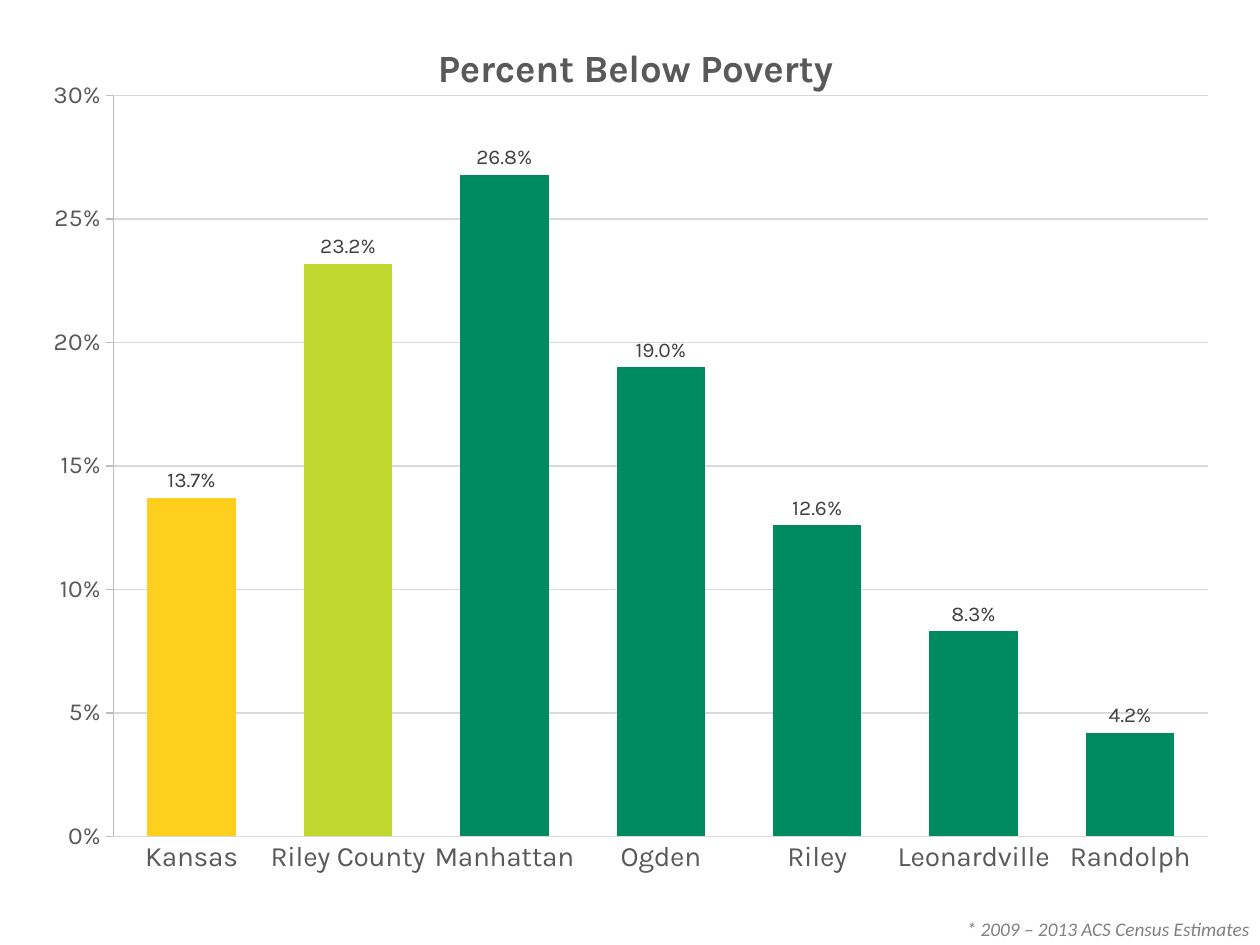
from lxml.etree import SubElement
from pptx import Presentation
from pptx.chart.data import CategoryChartData
from pptx.dml.color import RGBColor
from pptx.enum.chart import XL_CHART_TYPE, XL_LABEL_POSITION, XL_TICK_MARK
from pptx.enum.text import MSO_ANCHOR, MSO_AUTO_SIZE, PP_ALIGN
from pptx.oxml import parse_xml
from pptx.oxml.ns import nsdecls, qn
from pptx.util import Inches, Pt

YELLOW = RGBColor(0xFF, 0xCF, 0x1D)
LIME = RGBColor(0xC0, 0xD7, 0x30)
GREEN = RGBColor(0x00, 0x8A, 0x5F)
DARK_GREEN = RGBColor(0x06, 0x62, 0x43)
TEXT_GRAY = RGBColor(0x59, 0x59, 0x59)
LABEL_GRAY = RGBColor(0x40, 0x40, 0x40)
NOTE_GRAY = RGBColor(0x80, 0x80, 0x80)
AXIS_GRAY = RGBColor(0xBD, 0xBD, 0xBD)
GRID_GRAY = RGBColor(0xD9, 0xD9, 0xD9)

POVERTY = [
    ("Kansas", 0.137, YELLOW),
    ("Riley County", 0.232, LIME),
    ("Manhattan", 0.268, GREEN),
    ("Ogden", 0.19, GREEN),
    ("Riley", 0.126, GREEN),
    ("Leonardville", 0.083, GREEN),
    ("Randolph", 0.042, GREEN),
]


def style_font(font, name, size, color, bold=False, italic=False):
    font.name = name
    font.size = Pt(size)
    font.color.rgb = color
    font.bold = bold
    font.italic = italic


def style_line(line, color):
    line.color.rgb = color
    line.width = Pt(0.75)


def set_layout(element, index, **settings):
    """Give a chart part a manual layout, as fractions of the chart."""
    for old_layout in element.findall(qn("c:layout")):
        element.remove(old_layout)
    layout = parse_xml(f"<c:layout {nsdecls('c')}/>")
    manual = SubElement(layout, qn("c:manualLayout"))
    for name, value in settings.items():
        SubElement(manual, qn(f"c:{name}")).set("val", str(value))
    element.insert(index, layout)


def style_title(chart, width, height):
    chart.has_title = True
    title = chart.chart_title
    title.include_in_layout = False
    title.text_frame.text = "Percent Below Poverty"
    run = title.text_frame.paragraphs[0].runs[0]
    style_font(run.font, "Karla", 22, TEXT_GRAY, bold=True)
    set_layout(
        title._element, 1, xMode="edge", yMode="edge",
        x=Inches(3.34) / width, y=Inches(0.2) / height,
    )


def style_axes(chart):
    category_axis = chart.category_axis
    category_axis.major_tick_mark = XL_TICK_MARK.NONE
    style_font(category_axis.tick_labels.font, "Karla", 16, TEXT_GRAY)
    style_line(category_axis.format.line, GRID_GRAY)

    value_axis = chart.value_axis
    value_axis.minimum_scale = 0
    value_axis.maximum_scale = 0.3
    value_axis.major_unit = 0.05
    value_axis.major_tick_mark = XL_TICK_MARK.OUTSIDE
    value_axis.tick_labels.number_format = "0%"
    value_axis.tick_labels.number_format_is_linked = False
    style_font(value_axis.tick_labels.font, "Karla", 14, TEXT_GRAY)
    style_line(value_axis.format.line, AXIS_GRAY)
    style_line(value_axis.major_gridlines.format.line, GRID_GRAY)


def style_columns(plot):
    plot.gap_width = 77
    plot.vary_by_categories = False
    series = plot.series[0]
    series.format.fill.solid()
    series.format.fill.fore_color.rgb = DARK_GREEN
    for index, (_, _, color) in enumerate(POVERTY):
        fill = series.points[index].format.fill
        fill.solid()
        fill.fore_color.rgb = color

    labels = series.data_labels
    labels.show_value = True
    labels.position = XL_LABEL_POSITION.OUTSIDE_END
    labels.number_format = "0.0%"
    labels.number_format_is_linked = False
    style_font(labels.font, "Karla", 12, LABEL_GRAY)


def add_poverty_chart(slide, left, top, width, height):
    data = CategoryChartData(number_format="0.0%")
    data.categories = [place for place, _, _ in POVERTY]
    data.add_series("Series 1", [value for _, value, _ in POVERTY])
    chart = slide.shapes.add_chart(
        XL_CHART_TYPE.COLUMN_CLUSTERED, left, top, width, height, data
    ).chart
    chart.has_legend = False
    style_font(chart.font, "Calibri", 10, RGBColor(0, 0, 0))
    style_title(chart, width, height)
    style_axes(chart)
    style_columns(chart.plots[0])

    chart_space = chart._chartSpace
    set_layout(
        chart_space.find(".//" + qn("c:plotArea")), 0,
        layoutTarget="inner", xMode="edge", yMode="edge",
        x=Inches(0.82) / width, y=Inches(0.68) / height,
        w=Inches(8.69) / width, h=Inches(5.88) / height,
    )
    # A clear background keeps the source note visible under the chart frame.
    chart_space.find(qn("c:chart")).addnext(parse_xml(
        f"<c:spPr {nsdecls('c', 'a')}><a:noFill/><a:ln><a:noFill/></a:ln></c:spPr>"
    ))


def add_source_note(slide, left, top, width, height):
    text_frame = slide.shapes.add_textbox(left, top, width, height).text_frame
    text_frame.word_wrap = False
    text_frame.auto_size = MSO_AUTO_SIZE.SHAPE_TO_FIT_TEXT
    text_frame.vertical_anchor = MSO_ANCHOR.MIDDLE
    text_frame.margin_left = text_frame.margin_top = text_frame.margin_bottom = 0
    text_frame.margin_right = Inches(0.08)
    text_frame.text = "* 2009 – 2013 ACS Census Estimates"
    paragraph = text_frame.paragraphs[0]
    paragraph.alignment = PP_ALIGN.RIGHT
    style_font(paragraph.runs[0].font, "Calibri", 11, NOTE_GRAY, italic=True)


def main():
    presentation = Presentation()
    presentation.slide_width = Inches(10)
    presentation.slide_height = Inches(7.5)
    slide = presentation.slides.add_slide(presentation.slide_layouts[6])
    add_source_note(slide, Inches(7.58), Inches(7.25), Inches(2.42), Inches(0.25))
    add_poverty_chart(slide, Inches(0.08), Inches(0.08), Inches(9.92), Inches(7.42))
    presentation.save("out.pptx")


if __name__ == "__main__":
    main()
